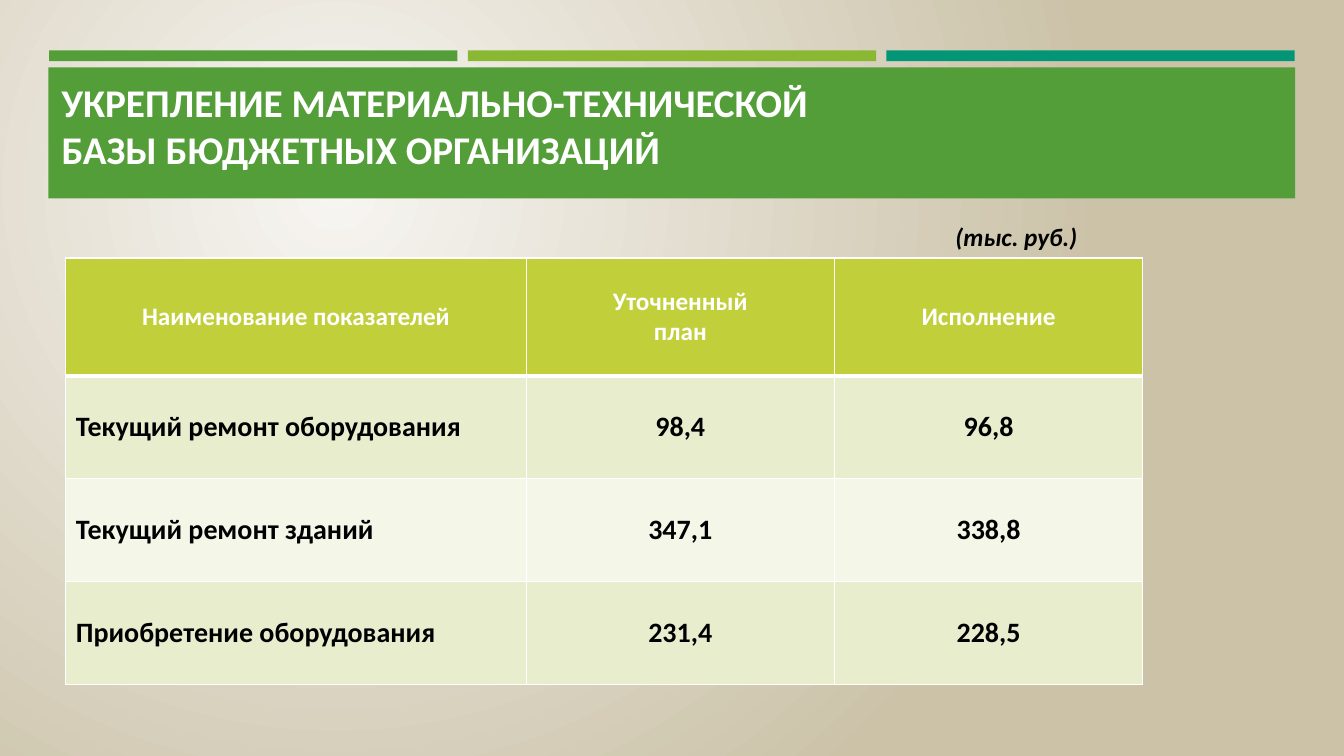
from dataclasses import dataclass

from lxml import etree
from pptx import Presentation
from pptx.dml.color import RGBColor
from pptx.enum.shapes import MSO_SHAPE
from pptx.enum.text import MSO_ANCHOR, MSO_AUTO_SIZE, PP_ALIGN
from pptx.oxml.ns import qn
from pptx.util import Cm, Pt

RECTANGLE = MSO_SHAPE.RECTANGLE
TOP, MIDDLE = MSO_ANCHOR.TOP, MSO_ANCHOR.MIDDLE
LEFT, CENTER = PP_ALIGN.LEFT, PP_ALIGN.CENTER
NO_AUTOFIT = MSO_AUTO_SIZE.NONE


@dataclass(frozen=True)
class Theme:
    font: str = "Calibri"
    green: str = "549E39"
    light_green: str = "8AB833"
    teal: str = "029676"
    header: str = "C0CF3A"
    bands: tuple = ("E8EDCE", "F4F6E8")
    white: str = "FFFFFF"
    black: str = "000000"
    glow: str = "F7F5F2"
    sand: str = "CBC2A8"
    title_size: int = 28
    label_size: int = 18
    body_size: int = 20


THEME = Theme()
HEADERS = ["Наименование показателей", "Уточненный\nплан", "Исполнение"]
ROWS = [
    ["Текущий ремонт оборудования", "98,4", "96,8"],
    ["Текущий ремонт зданий", "347,1", "338,8"],
    ["Приобретение оборудования", "231,4", "228,5"],
]


def set_background(slide):
    fill = slide.background.fill
    fill.gradient()
    for stop, color in zip(fill.gradient_stops, (THEME.glow, THEME.sand)):
        stop.color.rgb = RGBColor.from_string(color)
    gradient = slide.element.find(".//" + qn("a:gradFill"))
    gradient.remove(gradient.find(qn("a:lin")))
    circle = etree.SubElement(gradient, qn("a:path"), {"path": "circle"})
    etree.SubElement(circle, qn("a:fillToRect"),
                     {"l": "50000", "t": "50000", "r": "100000", "b": "100000"})


def add_bar(slide, left, top, width, height, color):
    shape = slide.shapes.add_shape(RECTANGLE, Cm(left), Cm(top), Cm(width), Cm(height))
    shape.shadow.inherit = False
    shape.fill.solid()
    shape.fill.fore_color.rgb = RGBColor.from_string(color)
    shape.line.fill.background()


def write_text(text_frame, text, size, color, alignment=LEFT, italic=False):
    for index, line in enumerate(text.split("\n")):
        paragraph = text_frame.add_paragraph() if index else text_frame.paragraphs[0]
        paragraph.alignment = alignment
        run = paragraph.add_run()
        run.text = line
        run.font.name = THEME.font
        run.font.size = Pt(size)
        run.font.bold = True
        run.font.italic = italic
        run.font.color.rgb = RGBColor.from_string(color)


def add_title(slide, text):
    title = slide.shapes.title
    title.left, title.top, title.width, title.height = Cm(1.3), Cm(1.85), Cm(21.9), Cm(3.4)
    text_frame = title.text_frame
    text_frame.auto_size = NO_AUTOFIT
    text_frame.word_wrap = True
    text_frame.vertical_anchor = TOP
    text_frame.margin_right = Cm(0.8)
    write_text(text_frame, text, THEME.title_size, THEME.white)


def add_unit_label(slide, text):
    label = slide.shapes.add_textbox(Cm(23.83), Cm(5.46), Cm(4.06), Cm(1.02))
    label.text_frame.word_wrap = True
    write_text(label.text_frame, text, THEME.label_size, THEME.black, italic=True)


def set_borders(cell, bottom_width):
    properties = cell._tc.get_or_add_tcPr()
    sides = (("a:lnL", 1), ("a:lnR", 1), ("a:lnT", 1), ("a:lnB", bottom_width))
    for position, (side, width) in enumerate(sides):
        line = etree.Element(qn(side), {"w": str(Pt(width))})
        fill = etree.SubElement(line, qn("a:solidFill"))
        etree.SubElement(fill, qn("a:srgbClr"), {"val": THEME.white})
        properties.insert(position, line)


def fill_cell(cell, text, size, color, background, alignment, bottom_width=1):
    cell.vertical_anchor = MIDDLE
    cell.fill.solid()
    cell.fill.fore_color.rgb = RGBColor.from_string(background)
    write_text(cell.text_frame, text, size, color, alignment)
    set_borders(cell, bottom_width)


def add_budget_table(slide):
    widths, heights = [11.6, 7.77, 7.77], [2.97] + [2.59] * len(ROWS)
    table = slide.shapes.add_table(len(heights), len(widths), Cm(1.66), Cm(6.5),
                                   Cm(sum(widths)), Cm(sum(heights))).table
    for column, width in zip(table.columns, widths):
        column.width = Cm(width)
    for row, height in zip(table.rows, heights):
        row.height = Cm(height)
    for column, text in enumerate(HEADERS):
        fill_cell(table.cell(0, column), text, THEME.label_size, THEME.white,
                  THEME.header, CENTER, bottom_width=3)
    for row, texts in enumerate(ROWS):
        for column, text in enumerate(texts):
            fill_cell(table.cell(row + 1, column), text, THEME.body_size, THEME.black,
                      THEME.bands[row % 2], CENTER if column else LEFT)


def main():
    presentation = Presentation()
    presentation.slide_width, presentation.slide_height = Cm(33.87), Cm(19.05)
    slide = presentation.slides.add_slide(presentation.slide_layouts[5])
    set_background(slide)
    for index, color in enumerate((THEME.green, THEME.light_green, THEME.teal)):
        add_bar(slide, 1.24 + index * 10.55, 1.27, 10.29, 0.27, color)
    add_bar(slide, 1.22, 1.7, 31.42, 3.3, THEME.green)
    add_title(slide, "УКРЕПЛЕНИЕ МАТЕРИАЛЬНО-ТЕХНИЧЕСКОЙ БАЗЫ БЮДЖЕТНЫХ ОРГАНИЗАЦИЙ")
    title_element = slide.shapes.title.element
    slide.shapes.element.append(title_element)
    add_unit_label(slide, "(тыс. руб.)")
    add_budget_table(slide)
    presentation.save("out.pptx")


if __name__ == "__main__":
    main()
